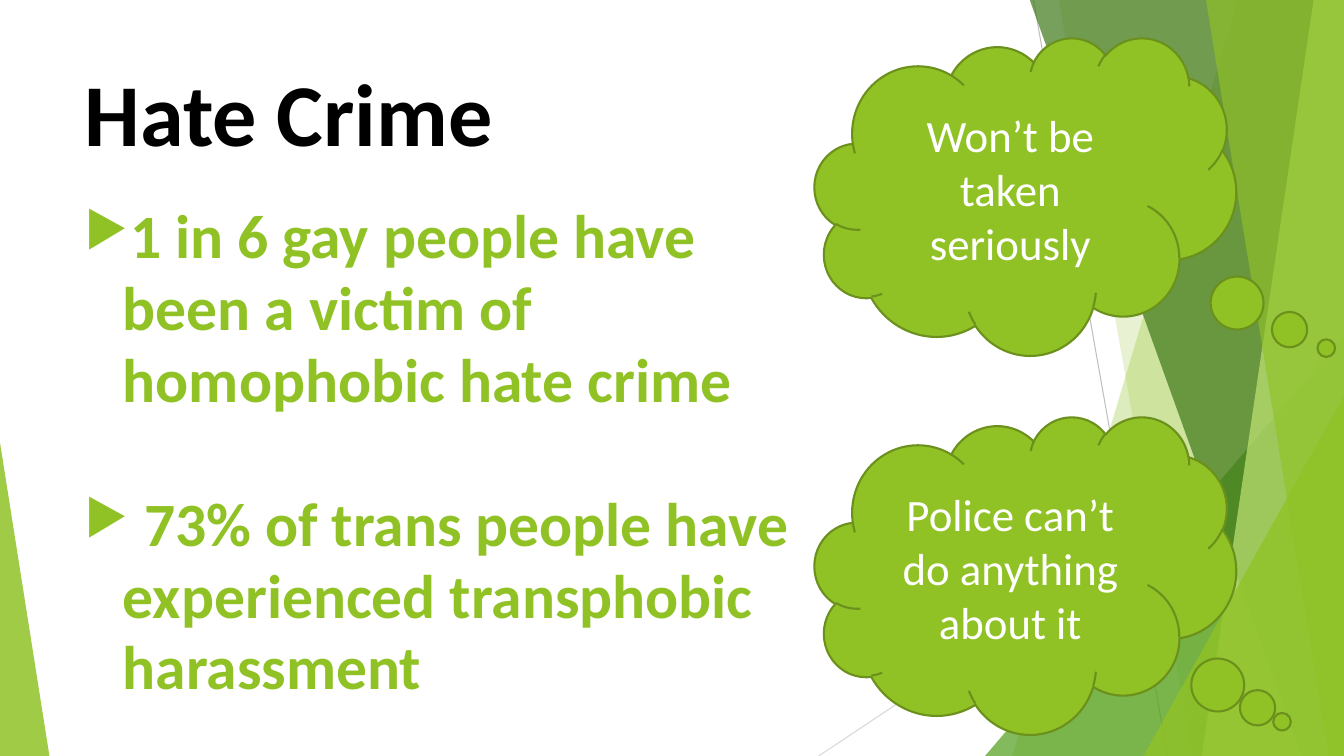
from lxml.etree import SubElement
from pptx import Presentation
from pptx.dml.color import RGBColor
from pptx.enum.shapes import MSO_CONNECTOR as Connector, MSO_SHAPE as Shape
from pptx.enum.text import MSO_ANCHOR as Anchor, MSO_AUTO_SIZE as AutoSize, PP_ALIGN as Align
from pptx.oxml.ns import qn
from pptx.util import Pt

PX = 9144  # EMU per px, 100 px to the inch
WIDTH, HEIGHT = 1333, 750
FONT = "Calibri"
COLOURS = {
    "lime": "90C226",
    "outline": "6B901C",
    "green": "54A021",
    "forest": "3F7819",
    "pale": "C0E474",
    "grey": "BFBFBF",
    "light grey": "D9D9D9",
    "black": "000000",
    "white": "FFFFFF",
}


def px(*lengths):
    return [length * PX for length in lengths]


def set_font(para, size, colour, bold=False):
    para.font.name = FONT
    para.font.size = Pt(size)
    para.font.bold = bold
    para.font.color.rgb = RGBColor.from_string(COLOURS[colour])


deck = Presentation()
deck.slide_width, deck.slide_height = px(WIDTH, HEIGHT)
page = deck.slides.add_slide(deck.slide_layouts[5])
shapes = page.shapes

# Thin lines behind the facets
for ends, colour in [
    ((1025, 0, 1158, HEIGHT), "grey"),
    ((WIDTH, 403, 812, HEIGHT), "light grey"),
]:
    line = shapes.add_connector(Connector.STRAIGHT, *px(*ends))
    line.line.color.rgb = RGBColor.from_string(COLOURS[colour])
    line.line.width = Pt(0.75)
    SubElement(line.element.spPr, qn("a:effectLst"))

# Facets: a band gives its top and bottom left x and runs to the right edge;
# a triangle gives its left, top and width, its apex position, and runs to the bottom
facets = [
    ("band", (1228, 1004), "lime", 30),
    ("band", (1050, 1183), "lime", 20),
    ("triangle", (977, 333, 356, 1), "green", 72),
    ("band", (1021, 1291), "forest", 70),
    ("band", (1303, 1192), "pale", 70),
    ("band", (1196, 1318), "lime", 65),
    ("triangle", (1134, 393, 199, 1), "lime", 80),
    ("triangle", (0, 439, 49, 0), "lime", 85),
]
for kind, geometry, colour, opacity in facets:
    if kind == "band":
        top_x, bottom_x = geometry
        outline = shapes.build_freeform(top_x, -1, scale=PX)
        outline.add_line_segments([(WIDTH, -1), (WIDTH, HEIGHT), (bottom_x, HEIGHT)])
        facet = outline.convert_to_shape()
    else:
        left, top, width, apex = geometry
        facet = shapes.add_shape(
            Shape.ISOSCELES_TRIANGLE, *px(left, top, width, HEIGHT - top))
        facet.adjustments[0] = apex
    facet.shadow.inherit = False
    facet.line.fill.background()
    facet.fill.solid()
    facet.fill.fore_color.rgb = RGBColor.from_string(COLOURS[colour])
    fill_colour = facet.element.spPr.find(qn("a:solidFill"))[0]
    SubElement(fill_colour, qn("a:alpha"), val=str(opacity * 1000))

# Statistics
box = shapes.add_textbox(*px(74, 195, 755, 533))
frame = box.text_frame
frame.word_wrap = True
statistics = [
    "1 in 6 gay people have been a victim of homophobic hate crime",
    " 73% of trans people have experienced transphobic harassment",
]
for index, statistic in enumerate(statistics):
    para = frame.add_paragraph() if index else frame.paragraphs[0]
    para.text = statistic
    para.line_spacing = 0.97
    para.space_before = Pt(52 * index)
    set_font(para, 44, "lime", bold=True)
    properties = para._p.get_or_add_pPr()
    properties.set("marL", str(38 * PX))
    properties.set("indent", str(-38 * PX))
    bullet_colour = SubElement(properties, qn("a:buClr"))
    SubElement(bullet_colour, qn("a:srgbClr"), val=COLOURS["lime"])
    SubElement(properties, qn("a:buSzPct"), val="80000")
    SubElement(properties, qn("a:buChar"), char="▶")

# Thought clouds
for top, tail, thought in [
    (37, (0.714, 0.479), "Won’t be taken seriously"),
    (413, (0.609, 0.462), "Police can’t do anything about it"),
]:
    cloud = shapes.add_shape(Shape.CLOUD_CALLOUT, *px(808, top, 418, 315))
    cloud.adjustments[0], cloud.adjustments[1] = tail
    cloud.shadow.inherit = False
    cloud.fill.solid()
    cloud.fill.fore_color.rgb = RGBColor.from_string(COLOURS["lime"])
    cloud.line.color.rgb = RGBColor.from_string(COLOURS["outline"])
    cloud.line.width = Pt(1.5)
    cloud.text_frame.word_wrap = True
    cloud.text_frame.vertical_anchor = Anchor.MIDDLE
    para = cloud.text_frame.paragraphs[0]
    para.text = thought
    para.alignment = Align.CENTER
    set_font(para, 32, "white")

# Title
title = shapes.title
title.left, title.top, title.width, title.height = px(74, 49, 940, 144)
frame = title.text_frame
frame.auto_size = AutoSize.NONE
frame.vertical_anchor = Anchor.TOP
frame.margin_top = 9 * PX
para = frame.paragraphs[0]
para.text = "Hate Crime"
para.alignment = Align.LEFT
set_font(para, 63, "black", bold=True)

deck.save("out.pptx")
